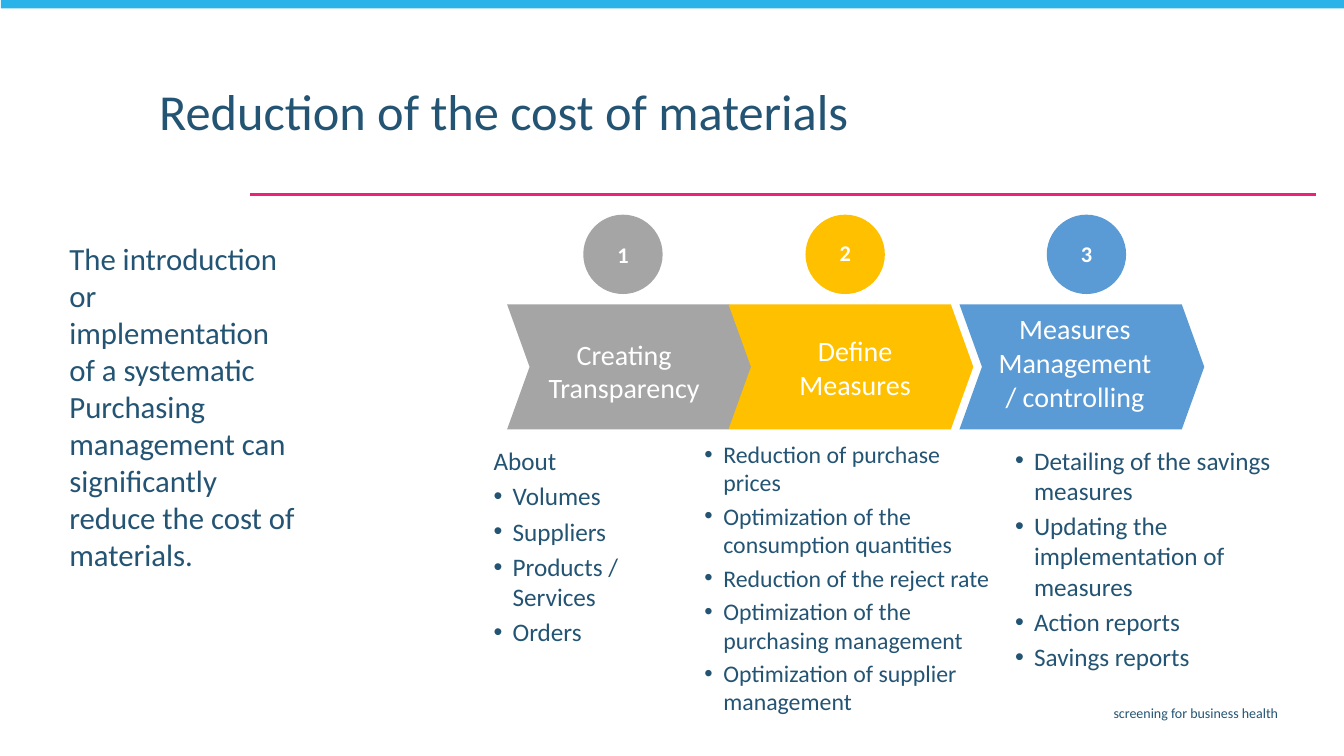
from lxml.etree import SubElement
from pptx import Presentation
from pptx.dml.color import RGBColor
from pptx.enum.shapes import MSO_CONNECTOR, MSO_SHAPE
from pptx.enum.text import MSO_ANCHOR, MSO_AUTO_SIZE, PP_ALIGN
from pptx.oxml.ns import qn
from pptx.util import Cm, Pt

NAVY, WHITE, SKY, PINK = "245473", "FFFFFF", "29B3E8", "EC2179"
FONT = "Calibri"
BULLET_INDENT = Cm(0.48)
LIST_INSETS = (0.1, 0.05)


def colour(value):
    return RGBColor.from_string(value)


class SlideBuilder:
    def __init__(self, slide):
        self.shapes = slide.shapes

    def shape(self, kind, left, top, width, height, fill):
        shape = self.shapes.add_shape(kind, Cm(left), Cm(top), Cm(width), Cm(height))
        shape.shadow.inherit = False
        shape.fill.solid()
        shape.fill.fore_color.rgb = colour(fill)
        shape.line.fill.background()
        return shape

    def rule(self, left, right, y, line_colour, weight):
        line = self.shapes.add_connector(
            MSO_CONNECTOR.STRAIGHT, Cm(left), Cm(y), Cm(right), Cm(y))
        line.line.color.rgb = colour(line_colour)
        line.line.width = Pt(weight)
        SubElement(line._element.spPr, qn("a:effectLst"))

    def text(self, left, top, width, height, lines, size, ink=NAVY, bold=False,
             align=PP_ALIGN.LEFT, anchor=MSO_ANCHOR.TOP, insets=(0.25, 0.13),
             grow=True, gap=0, plain_lines=None):
        box = self.shapes.add_textbox(Cm(left), Cm(top), Cm(width), Cm(height))
        frame = box.text_frame
        frame.word_wrap = True
        frame.vertical_anchor = anchor
        frame.margin_left = frame.margin_right = Cm(insets[0])
        frame.margin_top = frame.margin_bottom = Cm(insets[1])
        frame.auto_size = MSO_AUTO_SIZE.SHAPE_TO_FIT_TEXT if grow else MSO_AUTO_SIZE.NONE
        frame.text = "\n".join(lines)
        for index, para in enumerate(frame.paragraphs):
            para.alignment = align
            if index:
                para.space_before = Pt(gap)
            if plain_lines is not None and index >= plain_lines:
                self.bullet(para)
            for span in para.runs:
                span.font.name = FONT
                span.font.size = Pt(size)
                span.font.bold = bold
                span.font.color.rgb = colour(ink)
        return frame

    def bullet(self, para):
        properties = para._p.get_or_add_pPr()
        properties.set("marL", str(BULLET_INDENT))
        properties.set("indent", str(-BULLET_INDENT))
        SubElement(properties, qn("a:buFont"), typeface="Arial")
        SubElement(properties, qn("a:buChar"), char="•")

    def bullet_list(self, left, top, width, height, lines, size, plain_lines=0):
        self.text(left, top, width, height, lines, size, anchor=MSO_ANCHOR.MIDDLE,
                  insets=LIST_INSETS, gap=0.2 * size, plain_lines=plain_lines)

    def label(self, left, top, width, height, label, size, bold=False):
        self.text(left, top, width, height, [label], size, WHITE, bold,
                  PP_ALIGN.CENTER, MSO_ANCHOR.MIDDLE)

    def chevron(self, left, fill):
        chevron = self.shape(MSO_SHAPE.CHEVRON, left, 7.67, 6.17, 3.15, fill)
        chevron.adjustments[0] = 0.18

    def badge(self, left, fill, number, label_top):
        self.shape(MSO_SHAPE.OVAL, left, 5.41, 2, 2, fill)
        self.label(left - 0.75, label_top, 3.5, 0.94, number, 16, True)


STEPS = [
    ("A5A5A5", 12.78, 14.7, 5.94, "Creating Transparency", (13.34, 8.36, 4.78, 1.96)),
    ("FFC000", 18.36, 20.3, 5.89, "Define Measures", (19.86, 8.28, 3.38, 1.96)),
    ("5B9BD5", 24.18, 26.38, 5.92, "Measures Management / controlling",
     (24.79, 7.72, 4.6, 2.82)),
]

LISTS = [
    ((12.34, 11.1, 5.38, 5.33), 18, 1,
     ["About", "Volumes", "Suppliers", "Products / Services", "Orders"]),
    ((17.65, 10.95, 7.6, 7.21), 17, 0,
     ["Reduction of purchase prices", "Optimization of the consumption quantities",
      "Reduction of the reject rate", "Optimization of the purchasing management",
      "Optimization of supplier management"]),
    ((25.48, 11.1, 7.87, 5.94), 18, 0,
     ["Detailing of the savings measures", "Updating the implementation of measures",
      "Action reports", "Savings reports"]),
]


def main():
    deck = Presentation()
    deck.slide_width, deck.slide_height = Cm(33.87), Cm(19.05)
    builder = SlideBuilder(deck.slides.add_slide(deck.slide_layouts[6]))

    builder.rule(33.17, 6.3, 4.9, PINK, 1.5)
    builder.shape(MSO_SHAPE.RECTANGLE, 0.02, -0.05, 33.87, 0.26, SKY)
    builder.text(9.27, 17.63, 23.19, 0.74, ["screening for business health"], 10,
                 align=PP_ALIGN.RIGHT, grow=False)
    title = builder.text(3.76, 2.06, 24.59, 1.93,
                         ["Reduction of the cost of materials"], 36, grow=False)
    title.paragraphs[0].line_spacing = 0.9
    builder.text(1.52, 5.94, 6.3, 7.75,
                 ["The introduction or implementation of a systematic Purchasing "
                  "management can significantly reduce the cost of materials."],
                 22, insets=(0.23, 0.1))

    for fill, chevron_left, *_ in STEPS:
        builder.chevron(chevron_left, fill)
    for place, size, plain_lines, lines in LISTS:
        builder.bullet_list(*place, lines, size, plain_lines)
    for number, (fill, _, badge_left, label_top, name, place) in enumerate(STEPS, 1):
        builder.label(*place, name, 20)
        builder.badge(badge_left, fill, str(number), label_top)

    deck.save("out.pptx")


if __name__ == "__main__":
    main()
